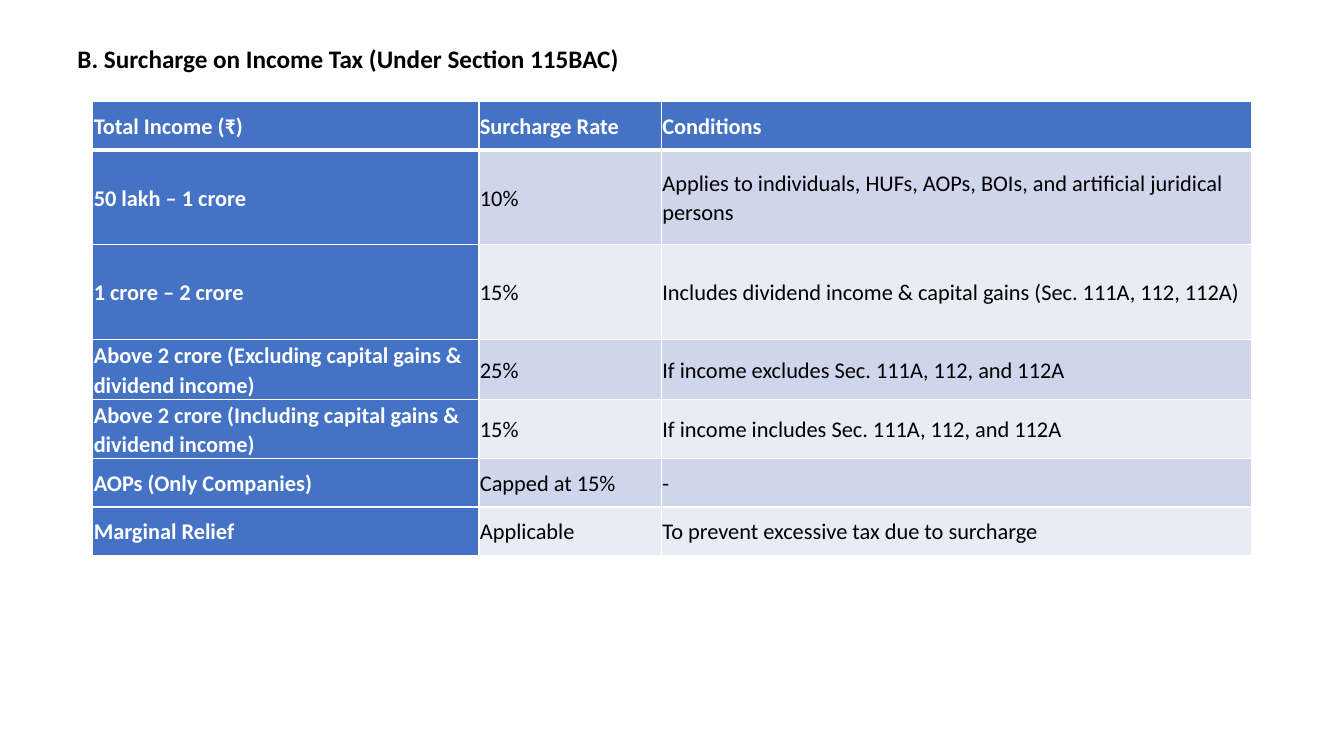
from pptx import Presentation
from pptx.dml.color import RGBColor
from pptx.enum.text import MSO_ANCHOR, MSO_AUTO_SIZE
from pptx.oxml import parse_xml
from pptx.oxml.ns import nsdecls
from pptx.util import Inches, Pt

BLUE, WHITE, BLACK = "4472C4", "FFFFFF", "000000"
BANDS = ["CFD5EA", "E9EBF5"]


def write(tf, text, size=16, color=BLACK, bold=False):
    tf.word_wrap = True
    p = tf.paragraphs[0]
    p.line_spacing = 1.07
    p.space_after = Pt(8)
    r = p.add_run()
    r.text = text
    r.font.name = "Calibri"
    r.font.size = Pt(size)
    r.font.bold = bold
    r.font.color.rgb = RGBColor.from_string(color)


def add_border(cell, side, width):
    """Draw a white line on one side (L, R, T or B), width in points."""
    cell._tc.get_or_add_tcPr().append(parse_xml(
        f'<a:ln{side} {nsdecls("a")} w="{Pt(width)}"><a:solidFill>'
        f'<a:srgbClr val="{WHITE}"/></a:solidFill></a:ln{side}>'))


prs = Presentation()
prs.slide_width = Inches(13.33)
prs.slide_height = Inches(7.5)
s = prs.slides.add_slide(prs.slide_layouts[6])

title = s.shapes.add_textbox(Inches(0.67), Inches(0.36), Inches(6.67), Inches(0.41))
write(title.text_frame, "B. Surcharge on Income Tax (Under Section 115BAC)", size=18, bold=True)
title.text_frame.auto_size = MSO_AUTO_SIZE.SHAPE_TO_FIT_TEXT

rows = [
    ("Total Income (₹)", "Surcharge Rate", "Conditions"),
    ("50 lakh – 1 crore", "10%",
     "Applies to individuals, HUFs, AOPs, BOIs, and artificial juridical persons"),
    ("1 crore – 2 crore", "15%",
     "Includes dividend income & capital gains (Sec. 111A, 112, 112A)"),
    ("Above 2 crore (Excluding capital gains & dividend income)", "25%",
     "If income excludes Sec. 111A, 112, and 112A"),
    ("Above 2 crore (Including capital gains & dividend income)", "15%",
     "If income includes Sec. 111A, 112, and 112A"),
    ("AOPs (Only Companies)", "Capped at 15%", "-"),
    ("Marginal Relief", "Applicable", "To prevent excessive tax due to surcharge"),
]
col_widths = [3.83, 1.81, 5.85]
row_heights = [0.48, 0.94, 0.94, 0.48, 0.48, 0.48, 0.48]

table = s.shapes.add_table(len(rows), len(col_widths), Inches(0.92), Inches(1.01),
                           Inches(sum(col_widths)), Inches(sum(row_heights))).table
table.first_col = True
for column, width in zip(table.columns, col_widths):
    column.width = Inches(width)

for i, (row, height) in enumerate(zip(rows, row_heights)):
    table.rows[i].height = Inches(height)
    for j, text in enumerate(row):
        cell = table.cell(i, j)
        heading = i == 0 or j == 0
        cell.vertical_anchor = MSO_ANCHOR.MIDDLE
        cell.margin_left = cell.margin_right = Inches(0.01)
        cell.margin_top = cell.margin_bottom = Inches(0.01)
        for side in "LRTB":
            thick = (i, side) in [(0, "B"), (1, "T")]
            add_border(cell, side, 3 if thick else 1)
        cell.fill.solid()
        cell.fill.fore_color.rgb = RGBColor.from_string(BLUE if heading else BANDS[(i - 1) % 2])
        write(cell.text_frame, text, color=WHITE if heading else BLACK, bold=heading)

prs.save("out.pptx")
